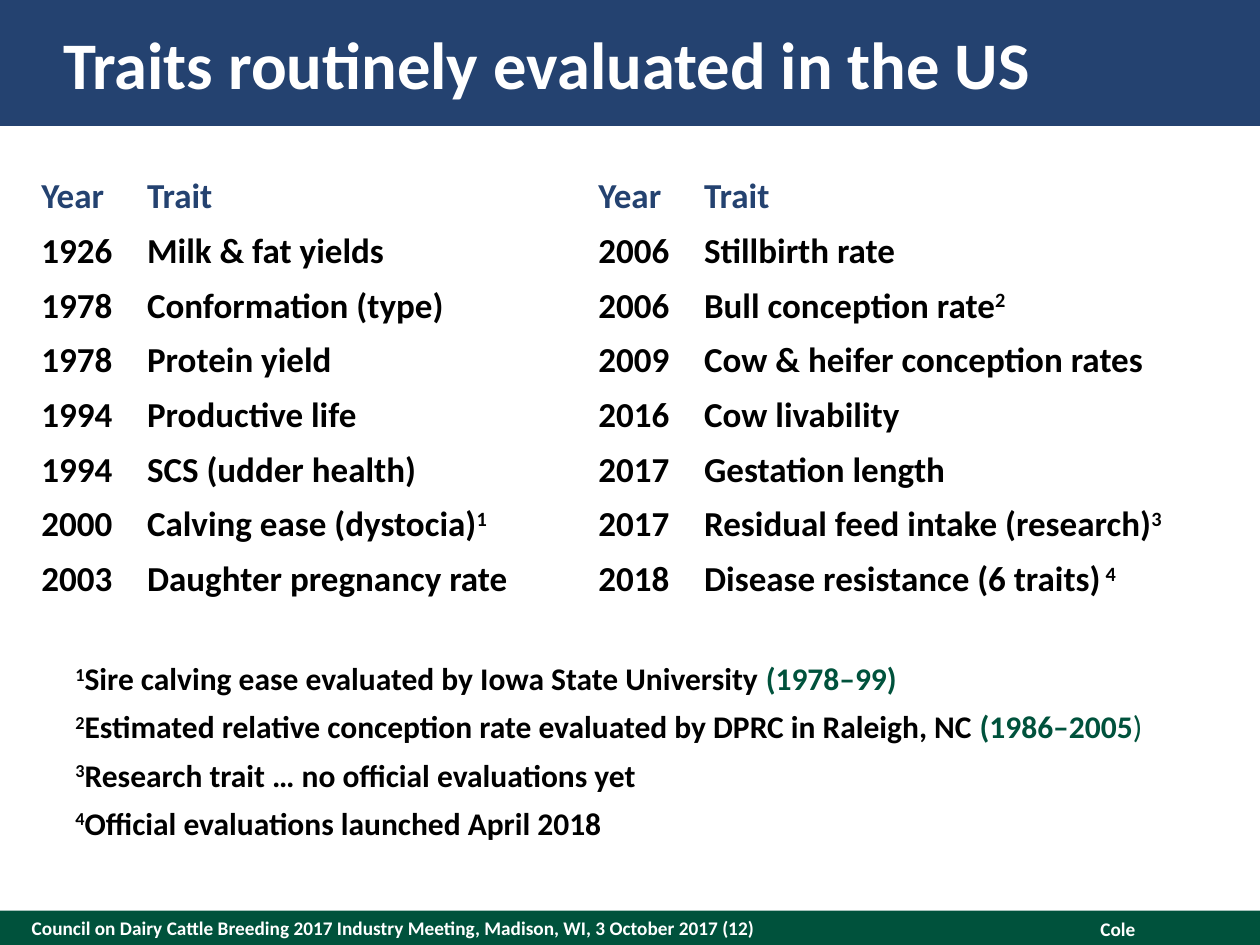
from dataclasses import dataclass

from pptx import Presentation
from pptx.dml.color import RGBColor
from pptx.enum import shapes, text
from pptx.util import Cm, Pt


@dataclass(frozen=True)
class Theme:
    font: str = "Calibri"
    blue: str = "244270"
    green: str = "00523C"
    black: str = "000000"
    white: str = "FFFFFF"
    title_size: int = 38
    table_size: int = 20
    note_size: int = 18
    footer_size: int = 11


THEME = Theme()

# Content: text after "^" in a trait is its superscript note mark
TITLE = "Traits routinely evaluated in the US"
MEETING = ("Council on Dairy Cattle Breeding 2017 Industry Meeting, "
           "Madison, WI, 3 October 2017 (12)")
AUTHOR = "Cole"
HEADER = ("Year", "Trait")
EARLY_TRAITS = [
    ("1926", "Milk & fat yields"),
    ("1978", "Conformation (type)"),
    ("1978", "Protein yield"),
    ("1994", "Productive life"),
    ("1994", "SCS (udder health)"),
    ("2000", "Calving ease (dystocia)^1"),
    ("2003", "Daughter pregnancy rate"),
]
LATE_TRAITS = [
    ("2006", "Stillbirth rate"),
    ("2006", "Bull conception rate^2"),
    ("2009", "Cow & heifer conception rates"),
    ("2016", "Cow livability"),
    ("2017", "Gestation length"),
    ("2017", "Residual feed intake (research)^3"),
    ("2018", "Disease resistance (6 traits)^ 4"),
]
# Note text, years in green, closing mark in regular weight
NOTES = [
    ("Sire calving ease evaluated by Iowa State University ", "(1978–99)", ""),
    ("Estimated relative conception rate evaluated by DPRC in Raleigh, NC ",
     "(1986–2005", ")"),
    ("Research trait … no official evaluations yet", "", ""),
    ("Official evaluations launched April 2018", "", ""),
]

# Layout
SLIDE_WIDTH, SLIDE_HEIGHT = Cm(25.4), Cm(19.05)
TITLE_BAR_HEIGHT, FOOTER_HEIGHT = Cm(2.54), Cm(0.69)
FOOTER_TOP = SLIDE_HEIGHT - FOOTER_HEIGHT
COLUMN_WIDTHS = (Cm(2.13), Cm(9.1), Cm(2.13), Cm(10.83))
ROW_HEIGHT = Cm(1.1)


def color(value):
    return RGBColor.from_string(value)


def style(paragraph, size):
    paragraph.font.name = THEME.font
    paragraph.font.size = Pt(size)
    paragraph.font.bold = True


def add_run(paragraph, words, ink, superscript=False):
    run = paragraph.add_run()
    run.text = words
    run.font.color.rgb = color(ink)
    if superscript:
        run._r.get_or_add_rPr().set("baseline", "30000")
    return run


def clear_margins(frame):
    frame.margin_left = frame.margin_right = 0
    frame.margin_top = frame.margin_bottom = 0


def add_bar(slide, top, height, fill):
    bar = slide.shapes.add_shape(
        shapes.MSO_SHAPE.RECTANGLE, 0, top, SLIDE_WIDTH, height)
    bar.shadow.inherit = False
    bar.fill.solid()
    bar.fill.fore_color.rgb = color(fill)
    bar.line.fill.background()
    slide.shapes._spTree.insert(2, bar._element)  # behind the title


def add_text_box(slide, left, top, width, height):
    frame = slide.shapes.add_textbox(left, top, width, height).text_frame
    frame.word_wrap = True
    return frame


def add_title(slide):
    title = slide.shapes.title
    title.left, title.top = Cm(1.27), Cm(0.51)
    title.width, title.height = Cm(22.86), Cm(1.52)
    frame = title.text_frame
    frame.auto_size = text.MSO_AUTO_SIZE.NONE
    frame.vertical_anchor = text.MSO_ANCHOR.MIDDLE
    clear_margins(frame)
    paragraph = frame.paragraphs[0]
    paragraph.alignment = text.PP_ALIGN.LEFT
    style(paragraph, THEME.title_size)
    add_run(paragraph, TITLE, THEME.white)


def add_footer(slide):
    meeting = add_text_box(slide, Cm(0.64), FOOTER_TOP, Cm(17.78), FOOTER_HEIGHT)
    clear_margins(meeting)
    meeting.vertical_anchor = text.MSO_ANCHOR.MIDDLE
    author = add_text_box(slide, Cm(18.06), FOOTER_TOP, Cm(5.08), Cm(0.73))
    author.paragraphs[0].alignment = text.PP_ALIGN.RIGHT
    for frame, words in ((meeting, MEETING), (author, AUTHOR)):
        style(frame.paragraphs[0], THEME.footer_size)
        add_run(frame.paragraphs[0], words, THEME.white)


def add_trait_table(slide):
    rows = [HEADER + HEADER]
    rows += [early + late for early, late in zip(EARLY_TRAITS, LATE_TRAITS)]
    table = slide.shapes.add_table(
        len(rows), len(COLUMN_WIDTHS), Cm(0.58), Cm(3.43),
        sum(COLUMN_WIDTHS), ROW_HEIGHT * len(rows)).table
    for column, width in zip(table.columns, COLUMN_WIDTHS):
        column.width = width
    for row_index, row in enumerate(rows):
        ink = THEME.black if row_index else THEME.blue
        for column_index, entry in enumerate(row):
            cell = table.cell(row_index, column_index)
            cell.fill.solid()
            cell.fill.fore_color.rgb = color(THEME.white)
            paragraph = cell.text_frame.paragraphs[0]
            paragraph.line_spacing = Pt(24)
            style(paragraph, THEME.table_size)
            words, _, mark = entry.partition("^")
            add_run(paragraph, words, ink)
            if mark:
                add_run(paragraph, mark, ink, superscript=True)


def add_notes(slide):
    frame = add_text_box(slide, Cm(1.27), Cm(13.16), Cm(22.86), Cm(3.99))
    for number, (words, years, closing) in enumerate(NOTES, start=1):
        paragraph = frame.paragraphs[0] if number == 1 else frame.add_paragraph()
        paragraph.space_after = Pt(6)
        style(paragraph, THEME.note_size)
        add_run(paragraph, str(number), THEME.black, superscript=True)
        add_run(paragraph, words, THEME.black)
        if years:
            add_run(paragraph, years, THEME.green)
        if closing:
            add_run(paragraph, closing, THEME.green).font.bold = False


def main():
    presentation = Presentation()
    presentation.slide_width, presentation.slide_height = SLIDE_WIDTH, SLIDE_HEIGHT
    slide = presentation.slides.add_slide(presentation.slide_layouts[5])
    add_bar(slide, 0, TITLE_BAR_HEIGHT, THEME.blue)
    add_bar(slide, FOOTER_TOP, FOOTER_HEIGHT, THEME.green)
    add_title(slide)
    add_footer(slide)
    add_trait_table(slide)
    add_notes(slide)
    presentation.save("out.pptx")


if __name__ == "__main__":
    main()
